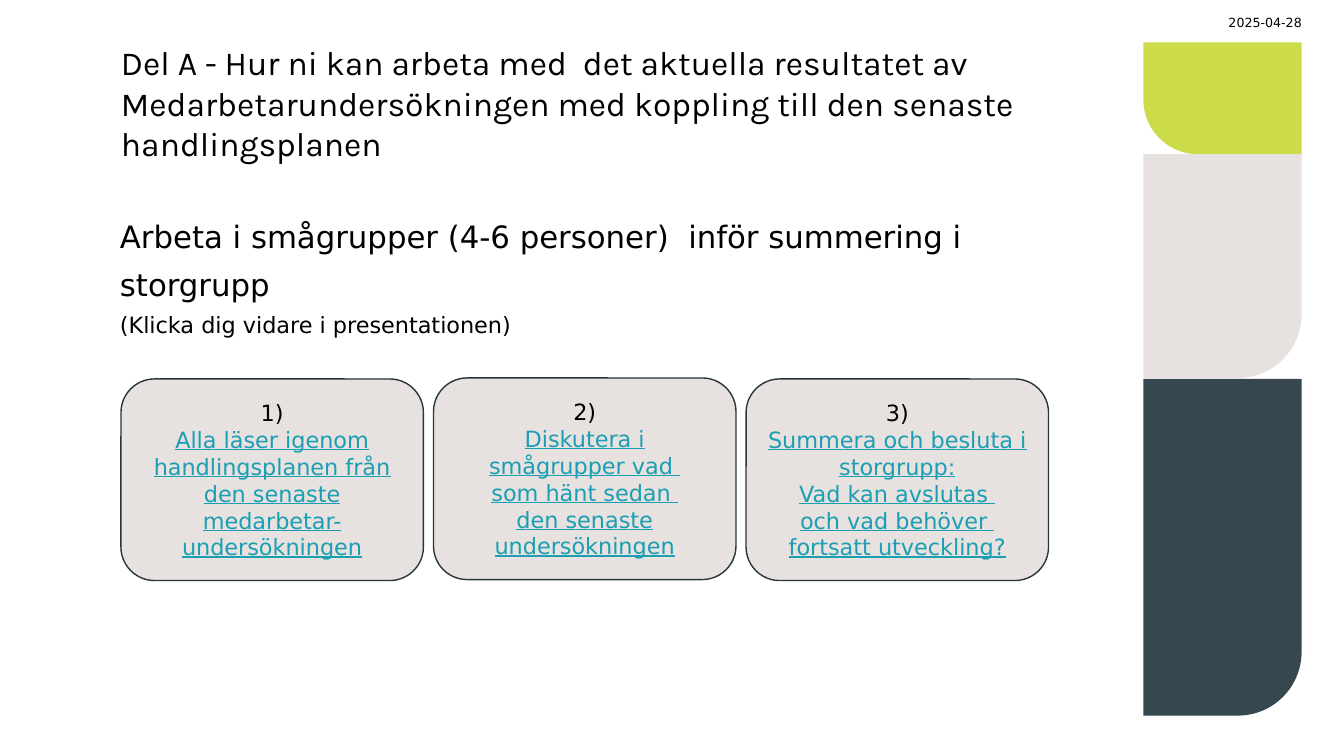
from dataclasses import dataclass

from pptx import Presentation
from pptx.dml.color import RGBColor
from pptx.enum.shapes import MSO_SHAPE as SHAPE
from pptx.enum.text import MSO_ANCHOR as ANCHOR, PP_ALIGN as ALIGN
from pptx.util import Inches, Pt


@dataclass(frozen=True)
class Theme:
    black: str = "000000"
    lime: str = "CCDB49"
    sand: str = "E7E1DF"
    slate: str = "37474F"
    outline: str = "29353A"
    link: str = "1A9FB3"
    heading_font: str = "Karla"
    body_font: str = "DejaVu Sans"
    title: int = 24
    lead: int = 22
    body: int = 16
    date: int = 9


T = Theme()


def write(p, text, size, color=T.black, font=T.body_font, underline=None, **layout):
    p.text = text
    for name, value in layout.items():
        setattr(p, name, value)
    fmt = {"size": Pt(size), "name": font, "underline": underline}
    for r in p.runs:
        for name, value in fmt.items():
            setattr(r.font, name, value)
        r.font.color.rgb = RGBColor.from_string(color)


def text_box(slide, box, anchor=ANCHOR.TOP):
    tf = slide.shapes.add_textbox(*map(Inches, box)).text_frame
    fmt = {"word_wrap": True, "vertical_anchor": anchor, "margin_left": 0,
           "margin_right": 0, "margin_top": 0, "margin_bottom": 0}
    for name, value in fmt.items():
        setattr(tf, name, value)
    return tf


def filled_shape(slide, kind, box, fill):
    sp = slide.shapes.add_shape(kind, *map(Inches, box))
    sp.shadow.inherit = False
    sp.fill.solid()
    sp.fill.fore_color.rgb = RGBColor.from_string(fill)
    sp.line.fill.background()
    return sp


def side_block(slide, top, height, fill, corner, flips):
    box = (11.34, top, 1.57, height)
    sp = filled_shape(slide, SHAPE.ROUND_1_RECTANGLE, box, fill)
    sp.adjustments[0] = corner
    for flip in flips:
        sp._element.spPr.xfrm.set(flip, "1")


def step_card(slide, left, top, number, lines):
    sp = filled_shape(slide, SHAPE.ROUNDED_RECTANGLE, (left, top, 3, 2), T.sand)
    sp.line.color.rgb = RGBColor.from_string(T.outline)
    sp.line.width = Pt(1)
    tf = sp.text_frame
    tf.word_wrap = True
    tf.vertical_anchor = ANCHOR.MIDDLE
    write(tf.paragraphs[0], f"{number})", T.body, alignment=ALIGN.CENTER)
    for line in lines:
        write(tf.add_paragraph(), line, T.body, T.link, underline=True,
              alignment=ALIGN.CENTER)


def main():
    prs = Presentation()
    prs.slide_width, prs.slide_height = Inches(13.33), Inches(7.5)
    slide = prs.slides.add_slide(prs.slide_layouts[6])

    side_block(slide, 0.42, 1.11, T.lime, 0.489, ("flipH", "flipV"))
    side_block(slide, 1.53, 2.22, T.sand, 0.403, ("flipV",))
    side_block(slide, 3.76, 3.34, T.slate, 0.403, ("flipV",))

    title = text_box(slide, (1.2, 0.47, 9.45, 1.15), ANCHOR.BOTTOM)
    write(title.paragraphs[0],
          "Del A - Hur ni kan arbeta med  det aktuella resultatet av "
          "Medarbetarundersökningen med koppling till den senaste handlingsplanen",
          T.title, font=T.heading_font)

    intro = text_box(slide, (1.19, 2.05, 9.46, 1.4))
    write(intro.paragraphs[0],
          "Arbeta i smågrupper (4-6 personer)  inför summering i storgrupp",
          T.lead, line_spacing=1.3)
    write(intro.add_paragraph(), "(Klicka dig vidare i presentationen)",
          T.body, line_spacing=1.3)

    date = text_box(slide, (11.92, 0.15, 0.99, 0.15), ANCHOR.MIDDLE)
    write(date.paragraphs[0], "2025-04-28", T.date, alignment=ALIGN.RIGHT)

    steps = [
        (3.76, ["Alla läser igenom handlingsplanen från den senaste "
                "medarbetar-undersökningen"]),
        (3.75, ["Diskutera i smågrupper vad \vsom hänt sedan \v"
                "den senaste undersökningen"]),
        (3.76, ["Summera och besluta i storgrupp:",
                "Vad kan avslutas \voch vad behöver \vfortsatt utveckling?"]),
    ]
    for i, (top, lines) in enumerate(steps):
        step_card(slide, 1.2 + i * 3.1, top, i + 1, lines)

    prs.save("out.pptx")


if __name__ == "__main__":
    main()
